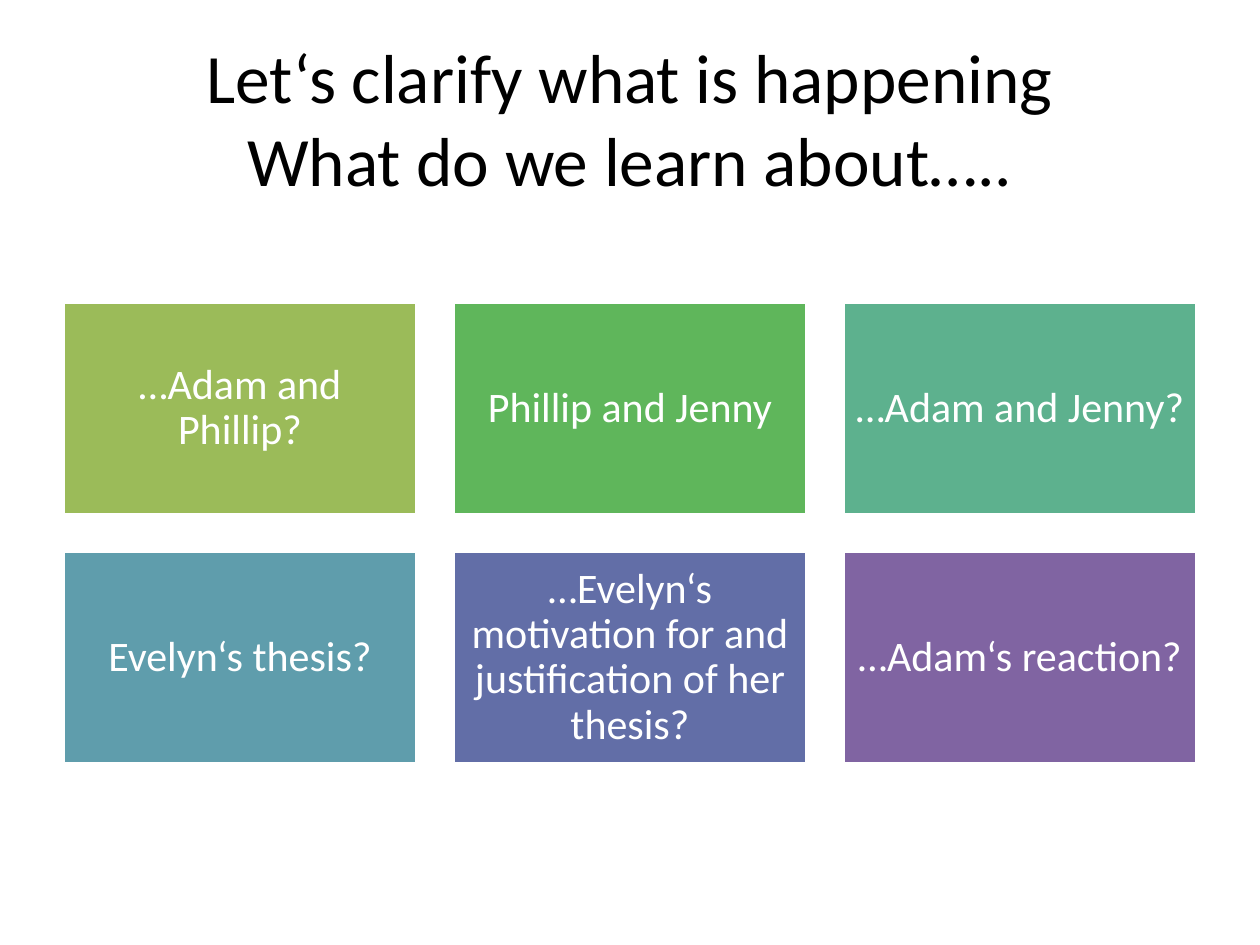
from pptx import Presentation
from pptx.dml.color import RGBColor
from pptx.enum.shapes import MSO_SHAPE
from pptx.enum.text import MSO_ANCHOR, PP_ALIGN
from pptx.util import Emu, Inches, Pt

PX_PER_INCH = 126
MARGIN = 63
TILE_W, TILE_H, GAP = 354, 213, 36
TILES_TOP = 302
COLUMNS = 3

TITLE = "Let‘s clarify what is happening\vWhat do we learn about….."
TOPICS = [
    ("…Adam and Phillip?", "9BBB59"),
    ("Phillip and Jenny", "5FB65B"),
    ("…Adam and Jenny?", "5DB18E"),
    ("Evelyn‘s thesis?", "5F9DAC"),
    ("…Evelyn‘s motivation for and justification of her thesis?", "626EA7"),
    ("…Adam‘s reaction?", "8064A2"),
]


def px(n):
    return Emu(round(n * Inches(1) / PX_PER_INCH))


def rgb(color):
    return RGBColor.from_string(color)


def set_text(sp, text, size, color):
    """Put centred Calibri text in a shape and return its paragraph."""
    tf = sp.text_frame
    tf.text = text
    tf.word_wrap = True
    tf.vertical_anchor = MSO_ANCHOR.MIDDLE
    p = tf.paragraphs[0]
    p.alignment = PP_ALIGN.CENTER
    for r in p.runs:
        r.font.name = "Calibri"
        r.font.size = Pt(size)
        r.font.color.rgb = rgb(color)
    return p


def add_title(s, text):
    sp = s.shapes.add_textbox(px(MARGIN), px(38), px(1134), px(158))
    set_text(sp, text, 39.6, "000000")


def add_tile(s, x, y, text, color):
    sp = s.shapes.add_shape(MSO_SHAPE.RECTANGLE, px(x), px(y), px(TILE_W), px(TILE_H))
    sp.shadow.inherit = False
    sp.fill.solid()
    sp.fill.fore_color.rgb = rgb(color)
    sp.line.color.rgb = rgb("FFFFFF")
    sp.line.width = Pt(2)
    tf = sp.text_frame
    tf.margin_left = tf.margin_right = tf.margin_top = tf.margin_bottom = Inches(0.1)
    p = set_text(sp, text, 24, "FFFFFF")
    p.line_spacing = 0.9


def main():
    prs = Presentation()
    prs.slide_width, prs.slide_height = Inches(10), Inches(7.5)
    s = prs.slides.add_slide(prs.slide_layouts[6])
    add_title(s, TITLE)
    for i, (text, color) in enumerate(TOPICS):
        row, col = divmod(i, COLUMNS)
        x = MARGIN + col * (TILE_W + GAP)
        y = TILES_TOP + row * (TILE_H + GAP)
        add_tile(s, x, y, text, color)
    prs.save("out.pptx")


if __name__ == "__main__":
    main()
